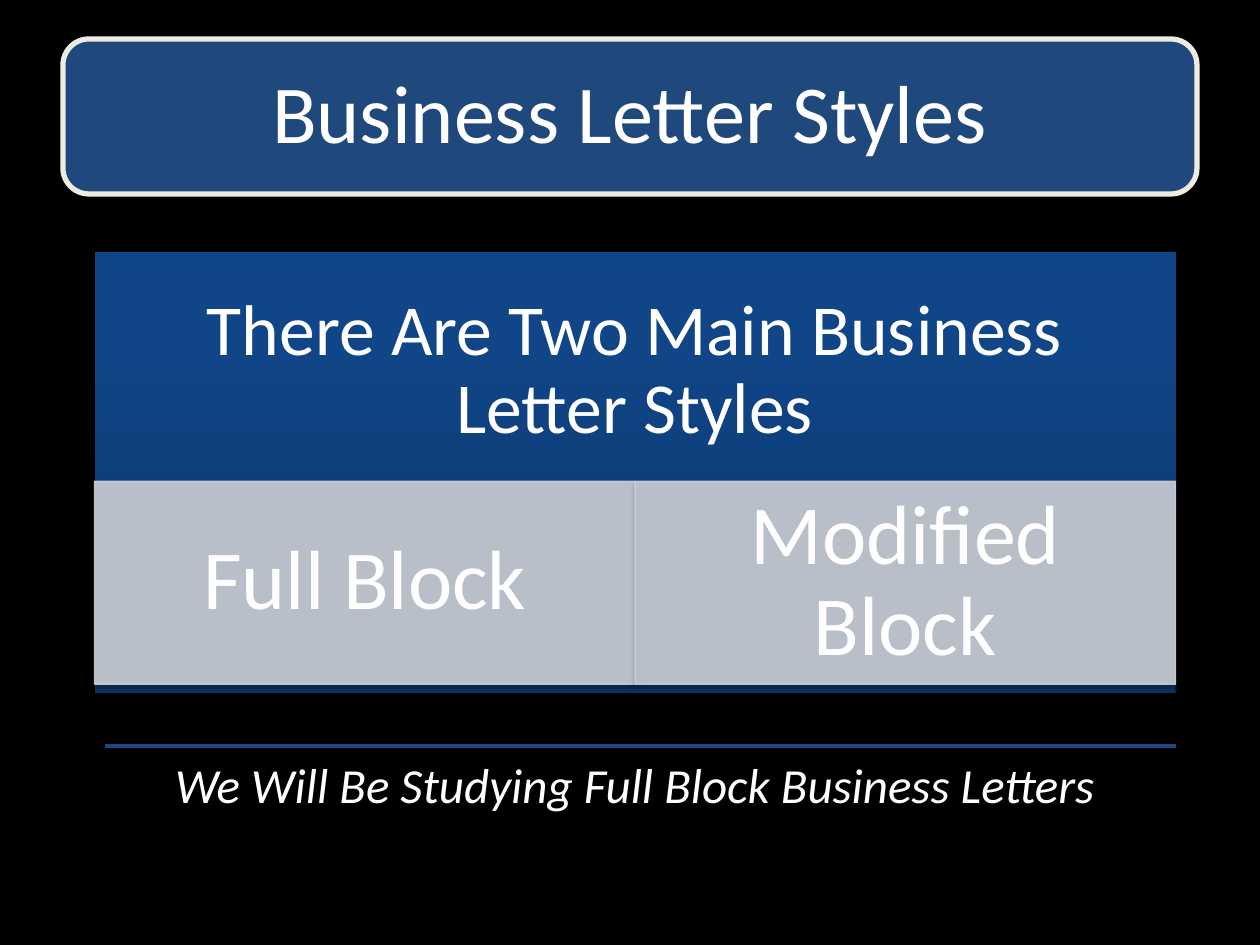
from copy import deepcopy
from dataclasses import dataclass

from lxml.etree import SubElement as Sub
from pptx import Presentation
from pptx.dml.color import RGBColor as RGB
from pptx.enum.shapes import MSO_CONNECTOR as LINK, MSO_SHAPE as SHAPE
from pptx.enum.text import MSO_ANCHOR as ANCHOR, MSO_AUTO_SIZE as FIT, PP_ALIGN as ALIGN
from pptx.oxml.ns import qn
from pptx.util import Inches, Pt


@dataclass(frozen=True)
class Theme:
    font: str = "Calibri"
    back: str = "000000"
    text: str = "FFFFFF"
    blue: str = "1F497D"
    cream: str = "EEECE1"
    gray: str = "CDD0D7"
    fade: tuple = ((0, "0D3568"), (0.8, "104587"), (1, "0E458A"))
    title: int = 47
    head: int = 41
    style: int = 48
    note: int = 28


theme = Theme()


def write(shape, text, size, pad, italic=False, anchor=ANCHOR.MIDDLE):
    """Fill a shape with centred text; pad is left, top, right, bottom in inches."""
    frame = shape.text_frame
    frame.word_wrap = True
    frame.auto_size = FIT.NONE
    frame.vertical_anchor = anchor
    (frame.margin_left, frame.margin_top,
     frame.margin_right, frame.margin_bottom) = map(Inches, pad)
    para = frame.paragraphs[0]
    para.alignment = ALIGN.CENTER
    para.line_spacing = 0.9
    run = para.add_run()
    run.text = text
    font = run.font
    font.name, font.size, font.italic = theme.font, Pt(size), italic
    font.color.rgb = RGB.from_string(theme.text)


def block(kind, left, top, width, height, alpha=35):
    """Add a shape without a line that casts a soft shadow downwards."""
    shape = slide.shapes.add_shape(
        kind, Inches(left), Inches(top), Inches(width), Inches(height))
    shape.line.fill.background()
    shape.shadow.inherit = False
    effects = shape._element.spPr.find(qn("a:effectLst"))
    shade = Sub(effects, qn("a:outerShdw"), blurRad=str(Pt(3.1)),
                dist=str(Pt(1.8)), dir="5400000", rotWithShape="0")
    color = Sub(shade, qn("a:srgbClr"), val=theme.back)
    Sub(color, qn("a:alpha"), val=str(alpha * 1000))
    return shape


deck = Presentation()
deck.slide_width, deck.slide_height = Inches(10), Inches(7.5)
slide = deck.slides.add_slide(deck.slide_layouts[5])
slide.background.fill.solid()
slide.background.fill.fore_color.rgb = RGB.from_string(theme.back)

# Title on its rounded panel
panel = block(SHAPE.ROUNDED_RECTANGLE, 0.5, 0.31, 9, 1.23, alpha=38)
panel.fill.solid()
panel.fill.fore_color.rgb = RGB.from_string(theme.blue)
panel.line.color.rgb = RGB.from_string(theme.cream)
panel.line.width = Pt(3)

title = slide.shapes.title
title.left, title.top = Inches(0.56), Inches(0.37)
title.width, title.height = Inches(8.88), Inches(1.11)
write(title, "Business Letter Styles", theme.title, [0.2] * 4)
panel._element.addnext(title._element)

# Band with the two styles on its lower part
left, wide, high = 0.75, 4.29, 1.61
band = block(SHAPE.RECTANGLE, left, 2, 2 * wide, 3.5)
band.fill.gradient()
band.fill.gradient_angle = 90
first = band._element.spPr.find(".//" + qn("a:gs"))
first.addnext(deepcopy(first))
for stop, (place, color) in zip(band.fill.gradient_stops, theme.fade):
    stop.position = place
    stop.color.rgb = RGB.from_string(color)
write(band, "There Are Two Main Business Letter Styles", theme.head,
      [0.32, 0.32, 0.32, 0.32 + high])

for col, name in enumerate(["Full Block", "Modified Block"]):
    box = block(SHAPE.RECTANGLE, left + col * wide, 3.82, wide, high)
    box.fill.solid()
    box.fill.fore_color.rgb = RGB.from_string(theme.gray)
    box.line.color.rgb = RGB.from_string(theme.gray)
    box.line.width = Pt(0.75)
    for color in box._element.spPr.findall(".//" + qn("a:solidFill") + "/" + qn("a:srgbClr")):
        Sub(color, qn("a:alpha"), val="90000")
    write(box, name, theme.style, [0.37, 0.07, 0.37, 0.07])

# Closing note under a rule
left, top, wide = Inches(0.83), Inches(5.92), Inches(8.5)
rule = slide.shapes.add_connector(LINK.STRAIGHT, left, top, left + wide, top)
rule.line.color.rgb = RGB.from_string(theme.blue)
rule.line.width = Pt(2)
Sub(rule._element.spPr, qn("a:effectLst"))
note = slide.shapes.add_textbox(left, top, wide, Inches(0.92))
write(note, "We Will Be Studying Full Block Business Letters ", theme.note,
      [0.12] * 4, italic=True, anchor=ANCHOR.TOP)

deck.save("out.pptx")
